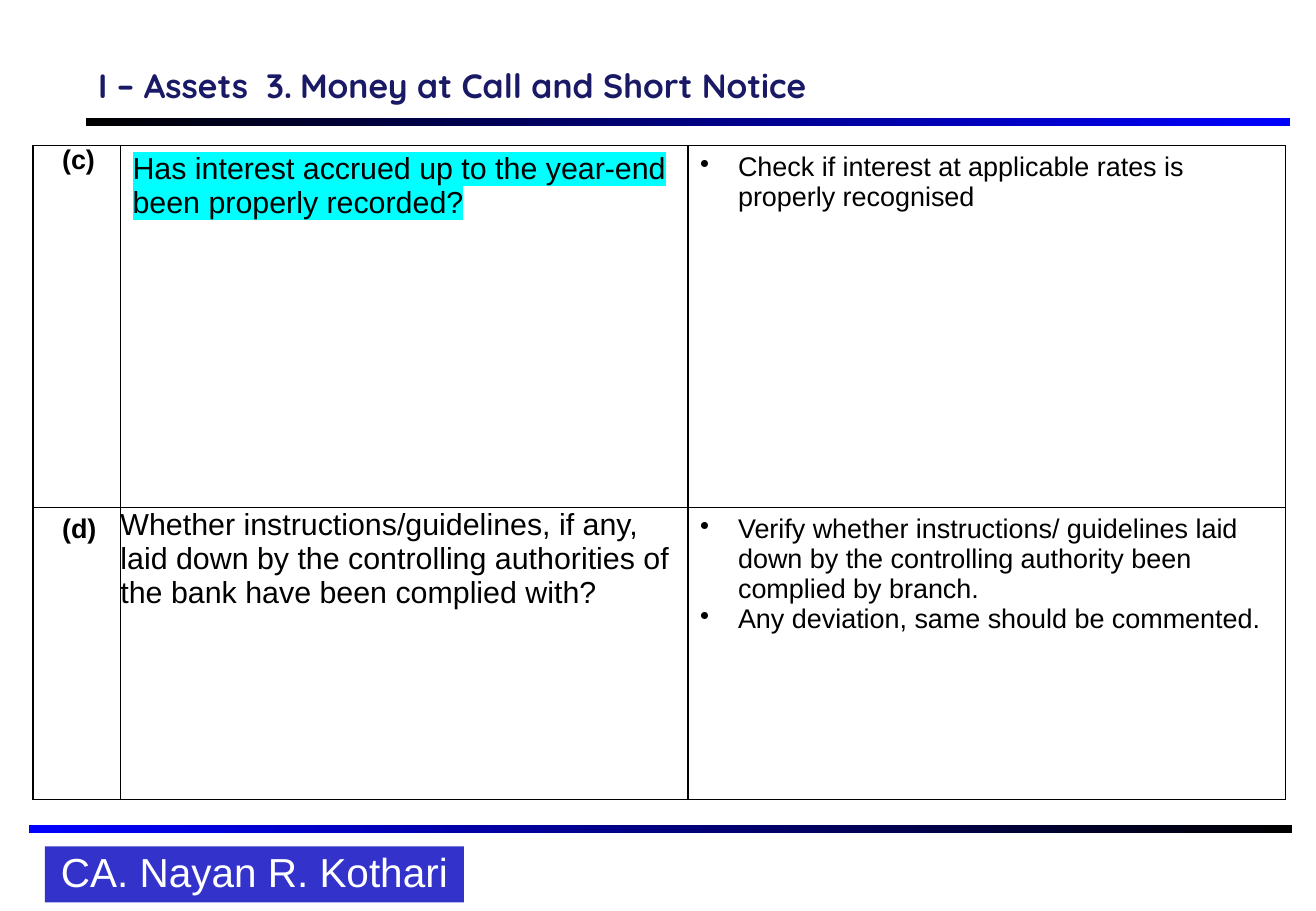
import pptx
import pptx.util
import pptx.dml.color
import pptx.enum.shapes
import pptx.enum.text
import pptx.oxml.ns
from lxml import etree

Pt = pptx.util.Pt
RECT = pptx.enum.shapes.MSO_SHAPE.RECTANGLE
ANCHOR = pptx.enum.text.MSO_ANCHOR
ALIGN = pptx.enum.text.PP_ALIGN

COLORS = {"black": "000000", "blue": "0000FF", "label": "3333CC",
          "white": "FFFFFF", "title": "191966", "cyan": "00FFFF"}

# text, size, font, extra letter spacing in points
TITLE = [("I – Assets", 20, "Quicksand", 0), (" ", 20, "Quicksand", 5),
         ("3.", 20, "Quicksand", 0), (" ", 18, "Times New Roman", 0),
         ("Money at Call and Short Notice", 20, "Quicksand", 0)]
AUTHOR = "CA. Nayan R. Kothari"
ROWS = [
    {"mark": "(c)",
     "question": "Has interest accrued up to the year-end been properly recorded?",
     "checks": ["Check if interest at applicable rates is properly recognised"]},
    {"mark": "(d)",
     "question": "Whether instructions/guidelines, if any, laid down by the "
                 "controlling authorities of the bank have been complied with?",
     "checks": ["Verify whether instructions/ guidelines laid down by the "
                "controlling authority been complied by branch.",
                "Any deviation, same should be commented."]},
]

COL_WIDTHS = [51.8, 336.4, 354.1]
ROW_HEIGHTS = [214.6, 172.8]
TABLE_LEFT, TABLE_TOP = 19.6, 86.4
BARS = [(51.1, 69.8, 713.5, "black", "blue"), (17.3, 488.9, 748.8, "blue", "black")]
BAR_HEIGHT = 5


def rgb(name):
    return pptx.dml.color.RGBColor.from_string(COLORS[name])


def add_xml(parent, tag, **attrs):
    return etree.SubElement(parent, pptx.oxml.ns.qn(tag), attrs)


def add_run(p, text, size, font="Arial", color="black", bold=False,
            highlight=None, spacing=0):
    r = p.add_run()
    r.text = text
    r.font.size = Pt(size)
    r.font.bold = bold
    r.font.color.rgb = rgb(color)
    rpr = r.font.fill._xPr
    if highlight:
        add_xml(add_xml(rpr, "a:highlight"), "a:srgbClr", val=COLORS[highlight])
    if spacing:
        rpr.set("spc", str(spacing * 100))
    r.font.name = font


def indent(p, left, first=0):
    ppr = p._p.get_or_add_pPr()
    ppr.set("marL", str(Pt(left)))
    ppr.set("indent", str(Pt(first)))
    return ppr


def add_rect(s, left, top, width, height):
    sp = s.shapes.add_shape(RECT, Pt(left), Pt(top), Pt(width), Pt(height))
    sp.shadow.inherit = False
    sp.line.fill.background()
    return sp


def add_bar(s, left, top, width, start, end):
    fill = add_rect(s, left, top, width, BAR_HEIGHT).fill
    fill.gradient()
    fill.gradient_angle = 0
    for stop, position, color in zip(fill.gradient_stops, (0, 1), (start, end)):
        stop.position = position
        stop.color.rgb = rgb(color)


def style_cell(cell):
    """Draw a thin black border on all four sides and leave the cell unfilled."""
    tcpr = cell._tc.get_or_add_tcPr()
    for side in ("a:lnL", "a:lnR", "a:lnT", "a:lnB"):
        ln = add_xml(tcpr, side, w=str(Pt(1)))
        add_xml(add_xml(ln, "a:solidFill"), "a:srgbClr", val=COLORS["black"])
    cell.fill.background()


def add_title(s):
    tf = s.shapes.add_textbox(Pt(51.1), Pt(0), Pt(713.5), Pt(66.2)).text_frame
    tf.word_wrap = True
    tf.vertical_anchor = ANCHOR.BOTTOM
    for text, size, font, spacing in TITLE:
        add_run(tf.paragraphs[0], text, size, font, "title", True, spacing=spacing)


def add_author(s):
    sp = add_rect(s, 26.6, 501.8, 248.4, 33.1)
    sp.fill.solid()
    sp.fill.fore_color.rgb = rgb("label")
    tf = sp.text_frame
    tf.word_wrap = False
    tf.vertical_anchor = ANCHOR.MIDDLE
    p = tf.paragraphs[0]
    p.alignment = ALIGN.CENTER
    p.line_spacing = 0.9
    add_run(p, AUTHOR, 24, color="white")


def add_checklist(s):
    table = s.shapes.add_table(len(ROWS), len(COL_WIDTHS), Pt(TABLE_LEFT), Pt(TABLE_TOP),
                               Pt(sum(COL_WIDTHS)), Pt(sum(ROW_HEIGHTS))).table
    table.first_row = table.horz_banding = False
    for col, width in zip(table.columns, COL_WIDTHS):
        col.width = Pt(width)
    for row, height, item in zip(table.rows, ROW_HEIGHTS, ROWS):
        row.height = Pt(height)
        mark, question, checks = row.cells
        for cell in row.cells:
            style_cell(cell)

        p = mark.text_frame.paragraphs[0]
        indent(p, 10)
        add_run(p, item["mark"], 16, bold=True)

        first = item is ROWS[0]
        if first:
            p.line_spacing = Pt(13.8)
        else:
            question.margin_left = question.margin_right = Pt(0)
            question.margin_top = question.margin_bottom = Pt(0)
        add_run(question.text_frame.paragraphs[0], item["question"], 18,
                highlight="cyan" if first else None)

        tf = checks.text_frame
        for i, text in enumerate(item["checks"]):
            p = tf.add_paragraph() if i else tf.paragraphs[0]
            add_xml(indent(p, 22.5, -22.5), "a:buChar", char="•")
            add_run(p, text, 16)


def main():
    prs = pptx.Presentation()
    prs.slide_width, prs.slide_height = Pt(780), Pt(540)
    s = prs.slides.add_slide(prs.slide_layouts[6])
    for bar in BARS:
        add_bar(s, *bar)
    add_author(s)
    add_title(s)
    add_checklist(s)
    prs.save("out.pptx")


if __name__ == "__main__":
    main()
